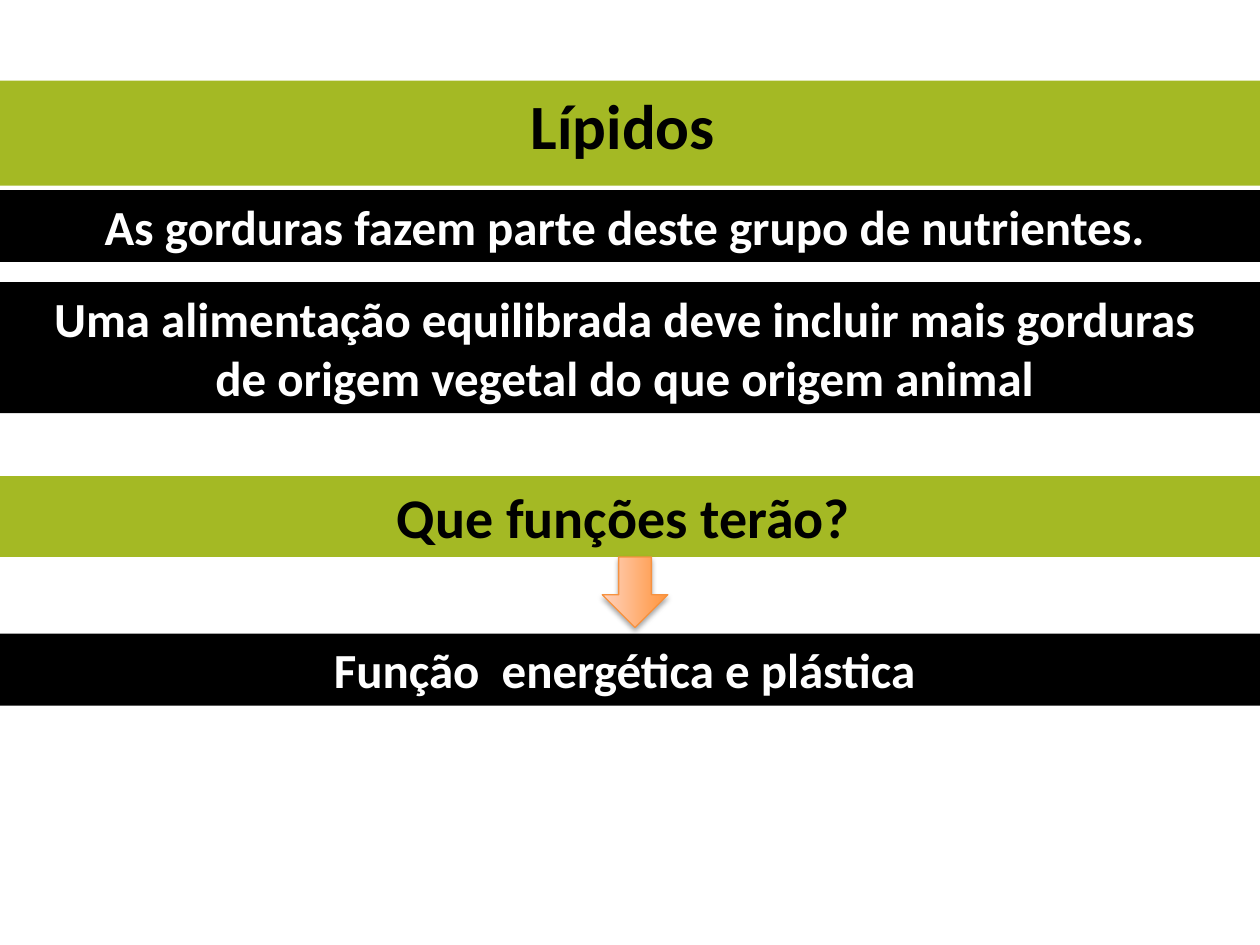
from dataclasses import dataclass

from lxml import etree
from pptx import Presentation
from pptx import util as u
from pptx.dml.color import RGBColor
from pptx.enum import shapes, text
from pptx.oxml import ns


@dataclass(frozen=True)
class Theme:
    font: str = "Calibri"
    green: str = "A4B924"
    black: str = "000000"
    white: str = "FFFFFF"
    arrow_dark: str = "FF953E"
    arrow_light: str = "FFD2BD"
    arrow_line: str = "F69240"
    title_size: int = 36
    question_size: int = 32
    body_size: int = 28


class SlideBuilder:
    def __init__(self, presentation, theme):
        self.presentation = presentation
        self.theme = theme
        self.slide = presentation.slides.add_slide(presentation.slide_layouts[5])

    def band(self, shape, top, height, wording, size, fill, color):
        shape.left, shape.top = 0, u.Inches(top)
        shape.width, shape.height = self.presentation.slide_width, u.Inches(height)
        shape.fill.solid()
        shape.fill.fore_color.rgb = RGBColor.from_string(fill)
        frame = shape.text_frame
        frame.text = wording
        frame.word_wrap = True
        frame.auto_size = text.MSO_AUTO_SIZE.SHAPE_TO_FIT_TEXT
        frame.vertical_anchor = text.MSO_ANCHOR.TOP
        for paragraph in frame.paragraphs:
            paragraph.alignment = text.PP_ALIGN.CENTER
            for run in paragraph.runs:
                run.font.name = self.theme.font
                run.font.size = u.Pt(size)
                run.font.bold = True
                run.font.color.rgb = RGBColor.from_string(color)

    def title(self, top, height, wording):
        theme = self.theme
        self.band(self.slide.shapes.title, top, height, wording,
                  theme.title_size, theme.green, theme.black)

    def question(self, top, height, wording):
        theme = self.theme
        self.band(self.slide.shapes.add_textbox(0, 0, 0, 0), top, height, wording,
                  theme.question_size, theme.green, theme.black)

    def statement(self, top, height, wording):
        theme = self.theme
        self.band(self.slide.shapes.add_textbox(0, 0, 0, 0), top, height, wording,
                  theme.body_size, theme.black, theme.white)

    def down_arrow(self, left, top, width, height):
        theme = self.theme
        shape = self.slide.shapes.add_shape(
            shapes.MSO_SHAPE.LEFT_ARROW,
            u.Inches(left), u.Inches(top), u.Inches(width), u.Inches(height))
        shape.rotation = 270
        shape.fill.gradient()
        shape.fill.gradient_angle = 90
        colors = (theme.arrow_dark, theme.arrow_light)
        for position, (stop, color) in enumerate(zip(shape.fill.gradient_stops, colors)):
            stop.position = position
            stop.color.rgb = RGBColor.from_string(color)
        shape.line.color.rgb = RGBColor.from_string(theme.arrow_line)
        shape.line.width = u.Pt(0.75)
        self.soft_shadow(shape)

    def soft_shadow(self, shape):
        shape.shadow.inherit = False
        effects = shape.element.spPr.find(ns.qn("a:effectLst"))
        shadow = etree.SubElement(
            effects, ns.qn("a:outerShdw"), blurRad=str(u.Pt(3.1)),
            dist=str(u.Pt(1.8)), dir="5400000", rotWithShape="0")
        color = etree.SubElement(shadow, ns.qn("a:srgbClr"), val=self.theme.black)
        etree.SubElement(color, ns.qn("a:alpha"), val="35000")


def main():
    presentation = Presentation()
    presentation.slide_width = u.Inches(10)
    presentation.slide_height = u.Inches(7.5)

    builder = SlideBuilder(presentation, Theme())
    builder.title(0.64, 0.71, "Lípidos ")
    builder.statement(1.51, 0.57, "As gorduras fazem parte deste grupo de nutrientes. ")
    builder.statement(2.24, 1.04, "Uma alimentação equilibrada deve incluir mais gorduras \v"
                                  "de origem vegetal do que origem animal ")
    builder.question(3.78, 0.64, "Que funções terão? ")
    builder.statement(5.03, 0.57, "Função  energética e plástica ")
    builder.down_arrow(4.76, 4.44, 0.56, 0.52)

    presentation.save("out.pptx")


if __name__ == "__main__":
    main()
